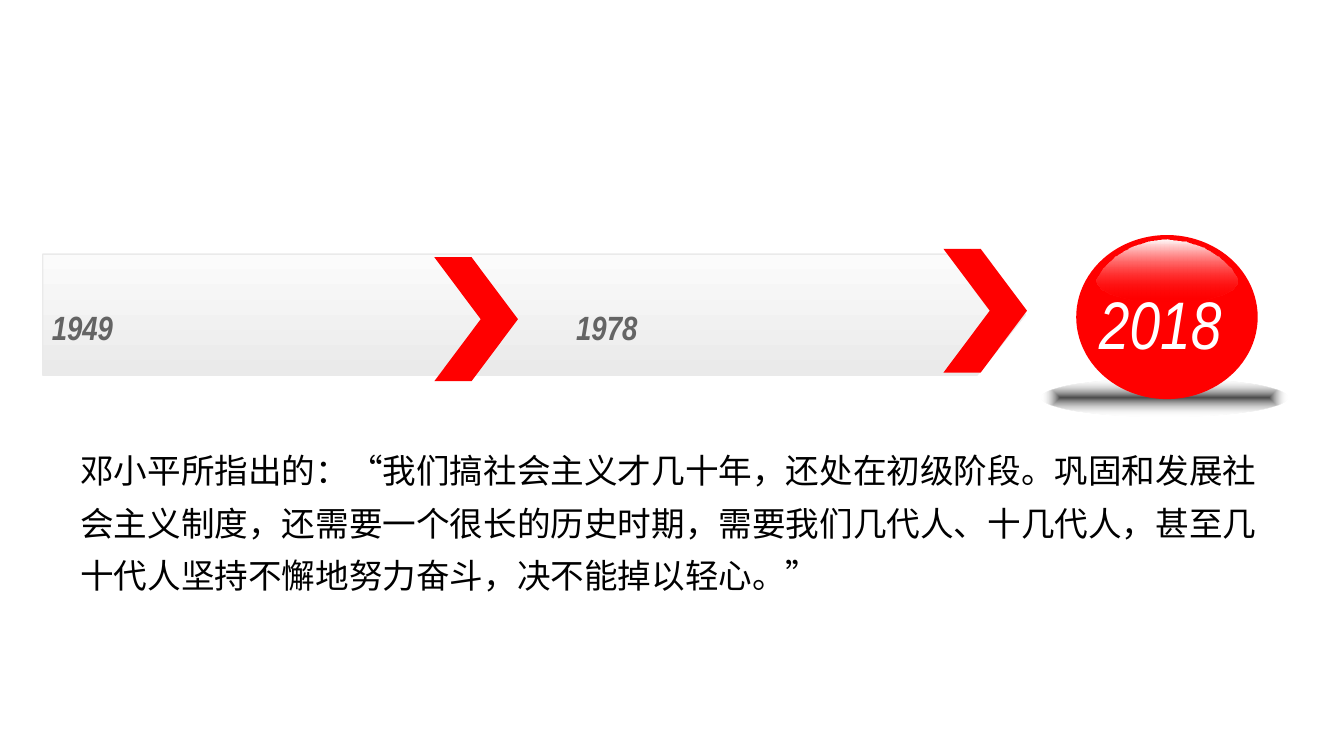
from lxml import etree
from pptx import Presentation
from pptx import util as u
from pptx.dml.color import RGBColor
from pptx.enum import shapes, text
from pptx.oxml import parse_xml
from pptx.oxml.ns import nsdecls, qn

RED = RGBColor(0xFF, 0x00, 0x00)
WHITE = RGBColor(0xFF, 0xFF, 0xFF)
BLACK = RGBColor(0x00, 0x00, 0x00)
GREY = RGBColor(0x64, 0x64, 0x64)
BAR_TOP = RGBColor(0xFB, 0xFB, 0xFB)
BAR_BOTTOM = RGBColor(0xEA, 0xEA, 0xEA)

LATIN = "Arial Narrow"
CHINESE = "Noto Sans CJK SC"
DOWNWARD = '<a:lin ang="5400000" scaled="0"/>'
FROM_CENTRE = ('<a:path path="shape"><a:fillToRect l="50000" t="50000" '
               'r="50000" b="50000"/></a:path>')
QUOTE = ("邓小平所指出的：“我们搞社会主义才几十年，还处在初级阶段。"
         "巩固和发展社会主义制度，还需要一个很长的历史时期，"
         "需要我们几代人、十几代人，甚至几十代人坚持不懈地努力奋斗，决不能掉以轻心。”")
GLOSS_HALF = [(0, 0), (0.27, 0.04), (0.52, 0.13), (0.73, 0.28), (0.9, 0.46),
              (1, 0.64), (0.98, 0.72), (0.92, 0.8), (0.81, 0.87),
              (0.65, 0.93), (0.46, 0.98), (0.2, 1)]


def paint(shape, color):
    shape.shadow.inherit = False
    shape.fill.solid()
    shape.fill.fore_color.rgb = color
    shape.line.fill.background()


def paint_gradient(shape, stops, direction):
    paint(shape, WHITE)
    marks = "".join(
        f'<a:gs pos="{place * 1000}"><a:srgbClr val="{color}">'
        f'<a:alpha val="{alpha * 1000}"/></a:srgbClr></a:gs>'
        for place, color, alpha in stops)
    gradient = parse_xml(f'<a:gradFill {nsdecls("a")} rotWithShape="1">'
                         f'<a:gsLst>{marks}</a:gsLst>{direction}</a:gradFill>')
    properties = shape.fill._xPr
    properties.replace(properties.find(qn("a:solidFill")), gradient)


def add_shape(parent, kind, left, top, width, height):
    return parent.add_shape(kind, u.Cm(left), u.Cm(top), u.Cm(width), u.Cm(height))


def add_text(parent, words, left, top, width, height, *, size, color, font=LATIN,
             bold=False, italic=False, wrap=False, spacing=None):
    box = parent.add_textbox(u.Cm(left), u.Cm(top), u.Cm(width), u.Cm(height))
    frame = box.text_frame
    frame.word_wrap = wrap
    frame.auto_size = text.MSO_AUTO_SIZE.SHAPE_TO_FIT_TEXT
    para = frame.paragraphs[0]
    if spacing:
        para.line_spacing = spacing
    span = para.add_run()
    span.text = words
    span.font.size = u.Pt(size)
    span.font.bold = bold
    span.font.italic = italic
    span.font.color.rgb = color
    span.font.name = font
    etree.SubElement(span.font._element, qn("a:ea"), typeface=font)


def add_gloss(parent, left, top, width, height):
    half = width / 2
    right = [(left + half * (1 + x), top + height * y) for x, y in GLOSS_HALF]
    mirrored = [(2 * (left + half) - x, y) for x, y in reversed(right[1:])]
    points = [(u.Cm(x), u.Cm(y)) for x, y in right + mirrored]
    builder = parent.build_freeform(*points[0], scale=1.0)
    builder.add_line_segments(points[1:], close=True)
    gloss = builder.convert_to_shape()
    paint_gradient(gloss, [(0, WHITE, 100), (100, RED, 0)], DOWNWARD)


def add_timeline(page, left, top, width, height):
    parent = page.shapes
    bar = add_shape(parent, shapes.MSO_SHAPE.PENTAGON, left, top, width, height)
    bar.adjustments[0] = 0.4
    paint_gradient(bar, [(0, BAR_TOP, 100), (100, BAR_BOTTOM, 100)], DOWNWARD)
    bar.line.color.rgb = BAR_BOTTOM
    bar.line.width = u.Pt(0.75)
    for across, down in ((7.4, 0.06), (17.02, -0.1)):
        arrow = add_shape(parent, shapes.MSO_SHAPE.CHEVRON,
                          left + across, top + down, 1.58, 2.34)
        arrow.adjustments[0] = 0.555
        paint(arrow, RED)
    for year, across in (("1949", -0.08), ("1978", 9.83)):
        add_text(parent, year, left + across, top + 0.87, 1.74, 1.02,
                 size=18, color=GREY, bold=True, italic=True)


def add_year_ball(page, left, top, width, height):
    parent = page.shapes.add_group_shape().shapes
    shade = add_shape(parent, shapes.MSO_SHAPE.OVAL,
                      left, top + height - 0.71, width, 0.71)
    paint_gradient(shade, [(0, BLACK, 70), (100, WHITE, 0)], FROM_CENTRE)
    ball = add_shape(parent, shapes.MSO_SHAPE.OVAL,
                     left + 0.66, top, 3.43, height - 0.33)
    paint(ball, RED)
    add_gloss(parent, left + 1.04, top + 0.08, 2.66, 1.17)
    add_text(parent, "2018", left + 0.84, top + 0.76, 3.02, 1.8,
             size=36, color=WHITE, italic=True)


def add_quote(page, left, top, width, height):
    add_text(page.shapes, QUOTE, left, top, width, height, size=18,
             color=BLACK, font=CHINESE, wrap=True, spacing=1.3)


def main():
    deck = Presentation()
    deck.slide_width = u.Cm(25.4)
    deck.slide_height = u.Cm(14.28)
    page = deck.slides.add_slide(deck.slide_layouts[6])
    add_year_ball(page, 19.68, 4.44, 4.65, 3.43)
    add_timeline(page, 0.81, 4.8, 18.57, 2.29)
    add_quote(page, 1.27, 8.15, 22.96, 3.25)
    deck.save("out.pptx")


if __name__ == "__main__":
    main()
